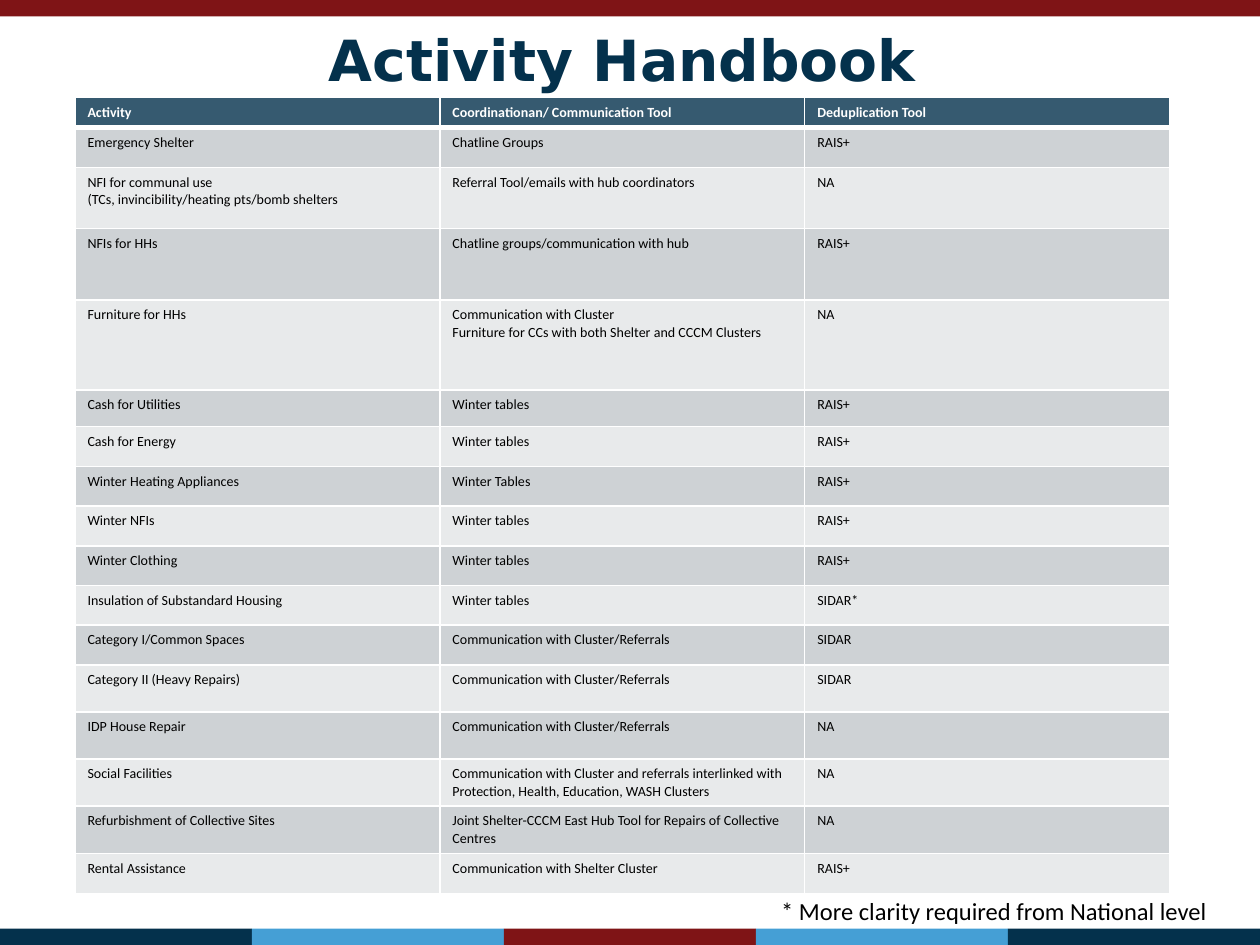
import dataclasses

import pptx
import pptx.dml.color
import pptx.enum.shapes
import pptx.enum.text
import pptx.oxml
import pptx.oxml.ns
import pptx.util

Cm = pptx.util.Cm


@dataclasses.dataclass(frozen=True)
class Theme:
    navy: str = "04314C"
    sky: str = "459FD5"
    red: str = "7F1416"
    header: str = "365A70"
    dark_band: str = "CED2D5"
    light_band: str = "E8EAEB"
    white: str = "FFFFFF"
    black: str = "000000"
    title_font: str = "DejaVu Sans"
    body_font: str = "Calibri"
    title_size: float = 32.4
    table_size: float = 8
    note_size: float = 14


theme = Theme()


def style_paragraph(paragraph, name, size, color, bold=False):
    paragraph.font.name = name
    paragraph.font.size = pptx.util.Pt(size)
    paragraph.font.bold = bold
    paragraph.font.color.rgb = pptx.dml.color.RGBColor.from_string(color)


def add_borders(cell, bottom_width):
    properties = cell._tc.get_or_add_tcPr()
    widths = {"lnL": 1, "lnR": 1, "lnT": 1, "lnB": bottom_width}
    for position, (side, width) in enumerate(widths.items()):
        line = pptx.oxml.parse_xml(
            f'<a:{side} {pptx.oxml.ns.nsdecls("a")} w="{pptx.util.Pt(width)}">'
            f'<a:solidFill><a:srgbClr val="{theme.white}"/></a:solidFill></a:{side}>'
        )
        properties.insert(position, line)


presentation = pptx.Presentation()
presentation.slide_width = Cm(25.4)
presentation.slide_height = Cm(19.05)
slide = presentation.slides.add_slide(presentation.slide_layouts[5])

bar_height = 0.33
bar_width = 25.4 / 5
bars = [(0, 0, 25.4, theme.red)]
footer_colors = [theme.navy, theme.sky, theme.red, theme.sky, theme.navy]
for index, color in enumerate(footer_colors):
    bars.append((index * bar_width, 19.05 - bar_height, bar_width, color))
for left, top, width, color in bars:
    bar = slide.shapes.add_shape(
        pptx.enum.shapes.MSO_SHAPE.RECTANGLE, Cm(left), Cm(top), Cm(width), Cm(bar_height)
    )
    bar.shadow.inherit = False
    bar.fill.solid()
    bar.fill.fore_color.rgb = pptx.dml.color.RGBColor.from_string(color)
    bar.line.fill.background()

title = slide.shapes.title
title.left, title.top, title.width, title.height = Cm(1.12), Cm(0.71), Cm(22.86), Cm(0.94)
title.text_frame.text = "Activity Handbook"
title.text_frame.vertical_anchor = pptx.enum.text.MSO_ANCHOR.MIDDLE
title_paragraph = title.text_frame.paragraphs[0]
title_paragraph.alignment = pptx.enum.text.PP_ALIGN.CENTER
style_paragraph(title_paragraph, theme.title_font, theme.title_size, theme.navy, True)

referrals = "Communication with Cluster/Referrals"
activities = [
    (0.6, "Activity", "Coordinationan/ Communication Tool", "Deduplication Tool"),
    (0.8, "Emergency Shelter", "Chatline Groups", "RAIS+"),
    (1.23, "NFI for communal use\n(TCs, invincibility/heating pts/bomb shelters",
     "Referral Tool/emails with hub coordinators", "NA"),
    (1.45, "NFIs for HHs", "Chatline groups/communication with hub", "RAIS+"),
    (1.81, "Furniture for HHs",
     "Communication with Cluster\nFurniture for CCs with both Shelter and CCCM Clusters", "NA"),
    (0.74, "Cash for Utilities", "Winter tables", "RAIS+"),
    (0.8, "Cash for Energy", "Winter tables", "RAIS+"),
    (0.8, "Winter Heating Appliances", "Winter Tables", "RAIS+"),
    (0.8, "Winter NFIs", "Winter tables", "RAIS+"),
    (0.8, "Winter Clothing", "Winter tables", "RAIS+"),
    (0.8, "Insulation of Substandard Housing", "Winter tables", "SIDAR*"),
    (0.8, "Category I/Common Spaces", referrals, "SIDAR"),
    (0.95, "Category II (Heavy Repairs)", referrals, "SIDAR"),
    (0.95, "IDP House Repair", referrals, "NA"),
    (0.95, "Social Facilities",
     "Communication with Cluster and referrals interlinked with "
     "Protection, Health, Education, WASH Clusters", "NA"),
    (0.95, "Refurbishment of Collective Sites",
     "Joint Shelter-CCCM East Hub Tool for Repairs of Collective Centres", "NA"),
    (0.82, "Rental Assistance", "Communication with Shelter Cluster", "RAIS+"),
]
table_height = sum(activity[0] for activity in activities)
table = slide.shapes.add_table(
    len(activities), 3, Cm(1.51), Cm(1.97), Cm(22.07), Cm(table_height)
).table
for row_index, (height, *texts) in enumerate(activities):
    table.rows[row_index].height = Cm(height)
    is_header = row_index == 0
    band = theme.dark_band if row_index % 2 else theme.light_band
    fill_color = theme.header if is_header else band
    text_color = theme.white if is_header else theme.black
    for column_index, text in enumerate(texts):
        cell = table.cell(row_index, column_index)
        cell.text = text
        cell.fill.solid()
        cell.fill.fore_color.rgb = pptx.dml.color.RGBColor.from_string(fill_color)
        add_borders(cell, 3 if is_header else 1)
        for paragraph in cell.text_frame.paragraphs:
            style_paragraph(paragraph, theme.body_font, theme.table_size, text_color, is_header)

note = slide.shapes.add_textbox(Cm(15.5), Cm(17.93), Cm(9.63), Cm(0.86))
note.text_frame.word_wrap = True
note.text_frame.text = "* More clarity required from National level"
style_paragraph(note.text_frame.paragraphs[0], theme.body_font, theme.note_size, theme.black)

presentation.save("out.pptx")
